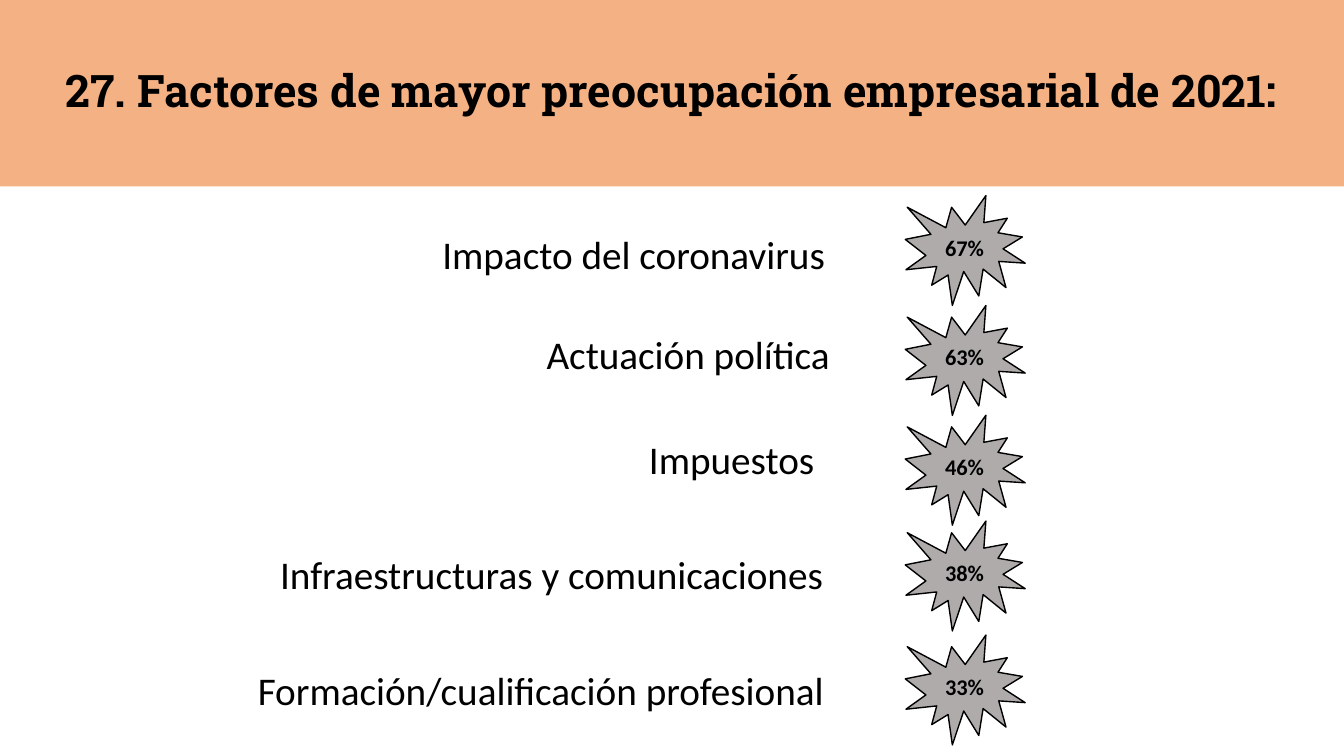
"""Build the slide on the main business concerns of 2021."""
from pptx import Presentation
from pptx.dml.color import RGBColor
from pptx.enum.shapes import MSO_SHAPE
from pptx.enum.text import MSO_ANCHOR, MSO_AUTO_SIZE, PP_ALIGN
from pptx.util import Pt

TITLE = "27. Factores de mayor preocupación empresarial de 2021:"
FACTORS = [
    ("Impacto del coronavirus", 308.9, 160.6, 290.9, PP_ALIGN.LEFT, "67%", 139.7),
    ("Actuación política", 380.2, 232.6, 219.6, PP_ALIGN.RIGHT, "63%", 218.2),
    ("Impuestos", 456.5, 307.4, 133.9, PP_ALIGN.LEFT, "46%", 296.6),
    ("Infraestructuras y comunicaciones", 193, 389.5, 406.8, PP_ALIGN.LEFT, "38%", 372.2),
    ("Formación/cualificación profesional", 177.1, 472.3, 429.8, PP_ALIGN.LEFT, "33%", 453.6),
]
WIDTH, HEIGHT, BANNER_HEIGHT = 960, 540, 133.2
LABEL_HEIGHT = 41.2
BURST_LEFT, BURST_WIDTH, BURST_HEIGHT = 646.6, 85.7, 78.5


def color(value):
    return RGBColor.from_string(value)


def write(holder, text, size, font="Calibri", bold=False, align=PP_ALIGN.CENTER,
          anchor=MSO_ANCHOR.MIDDLE, wrap=True, spacing=None):
    frame = holder.text_frame
    frame.word_wrap = wrap
    frame.vertical_anchor = anchor
    if not wrap:
        frame.auto_size = MSO_AUTO_SIZE.SHAPE_TO_FIT_TEXT
    paragraph = frame.paragraphs[0]
    paragraph.alignment = align
    paragraph.line_spacing = spacing
    run = paragraph.add_run()
    run.text = text
    run.font.name, run.font.size, run.font.bold = font, Pt(size), bold
    run.font.color.rgb = color("000000")


def add_filled(slide, kind, box, fill, line=None):
    shape = slide.shapes.add_shape(kind, *map(Pt, box))
    shape.shadow.inherit = False
    shape.fill.solid()
    shape.fill.fore_color.rgb = color(fill)
    if line:
        shape.line.color.rgb = color(line)
        shape.line.width = Pt(1)
    else:
        shape.line.fill.background()
    return shape


def main():
    deck = Presentation()
    deck.slide_width, deck.slide_height = Pt(WIDTH), Pt(HEIGHT)
    slide = deck.slides.add_slide(deck.slide_layouts[6])

    banner = add_filled(slide, MSO_SHAPE.RECTANGLE, (0, 0, WIDTH, BANNER_HEIGHT), "F4B183")
    write(banner, TITLE, 32, font="Roboto Slab", bold=True, spacing=0.9)

    for factor, left, top, width, align, share, burst_top in FACTORS:
        label = slide.shapes.add_textbox(*map(Pt, (left, top, width, LABEL_HEIGHT)))
        write(label, factor, 28, align=align, anchor=MSO_ANCHOR.TOP, wrap=False)
        burst = add_filled(slide, MSO_SHAPE.EXPLOSION1,
                           (BURST_LEFT, burst_top, BURST_WIDTH, BURST_HEIGHT),
                           "AFABAB", line="000000")
        write(burst, share, 16, bold=True)

    deck.save("out.pptx")


if __name__ == "__main__":
    main()
